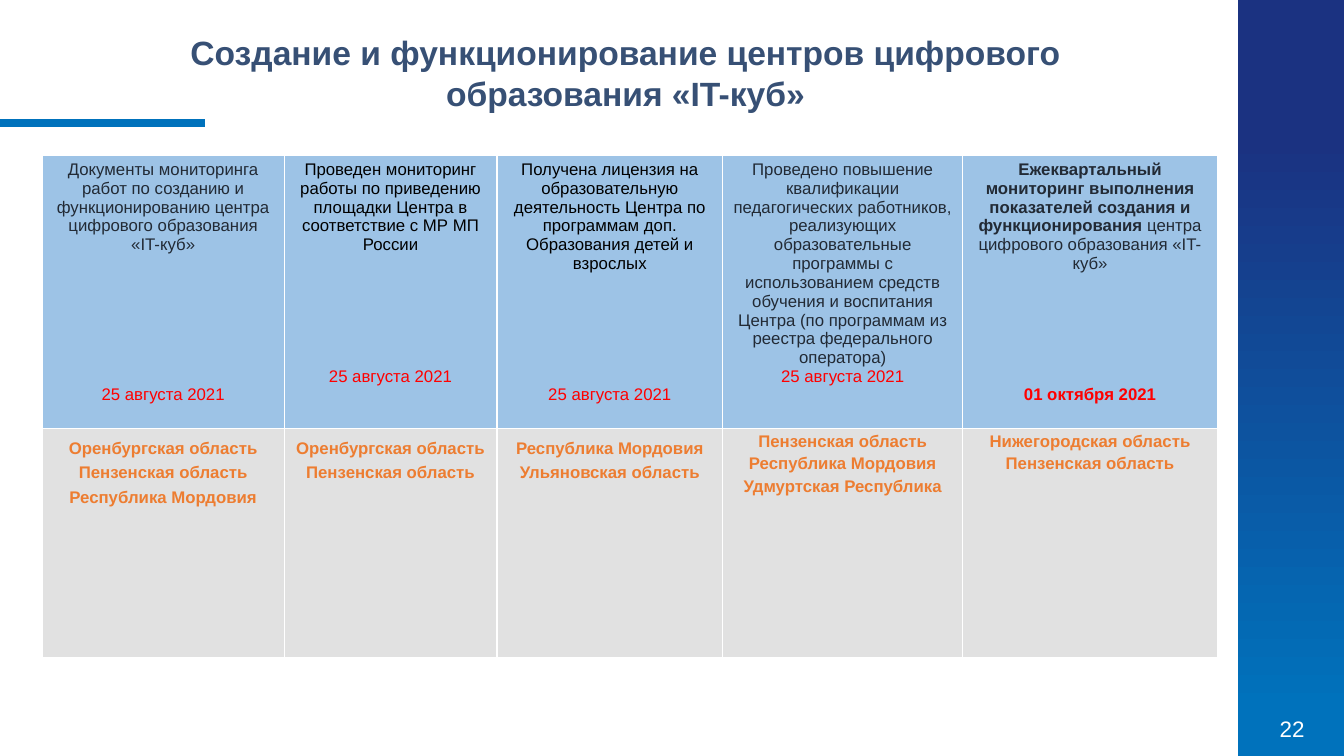
"""Build the slide on the "IT-куб" digital education centres."""
from lxml import etree
from pptx import Presentation
from pptx import util as u
from pptx.dml.color import RGBColor
from pptx.enum import shapes, text
from pptx.oxml.ns import qn

TITLE = "Создание и функционирование центров цифрового образования «IT-куб»"
PAGE_NUMBER = "22"
FONT = "Arial"
WHITE, BLACK, SLATE, RED, ORANGE = "FFFFFF", "000000", "222A35", "FF0000", "ED7D31"
BLUE, NAVY, TITLE_BLUE = "0072BC", "1B3281", "375075"
STAGE_FILL, REGION_FILL = "9DC3E6", "E1E1E1"
LINE_HEIGHT = 13.4
ROW_HEIGHTS = (195, 163.5)

STAGES = [
    dict(width=172.8, color=SLATE, gap_lines=7, date="25 августа 2021", date_bold=False,
         runs=[("Документы мониторинга работ по созданию и функционированию центра "
                "цифрового образования «IT-куб»", False)],
         regions=["Оренбургская область", "Пензенская область", "Республика Мордовия"],
         spacing=1.3),
    dict(width=152, color=BLACK, gap_lines=6, date="25 августа 2021", date_bold=False,
         runs=[("Проведен мониторинг работы по приведению площадки Центра в "
                "соответствие с МР МП России", False)],
         regions=["Оренбургская область", "Пензенская область"], spacing=1.3),
    dict(width=161.3, color=BLACK, gap_lines=6, date="25 августа 2021", date_bold=False,
         runs=[("Получена лицензия на образовательную деятельность Центра по "
                "программам доп. Образования детей и взрослых", False)],
         regions=["Республика Мордовия", "Ульяновская область"], spacing=1.3),
    dict(width=171.4, color=SLATE, gap_lines=0, date="25 августа 2021", date_bold=False,
         runs=[("Проведено повышение квалификации педагогических работников, "
                "реализующих образовательные программы с использованием средств "
                "обучения и воспитания Центра (по программам из реестра "
                "федерального оператора)", False)],
         regions=["Пензенская область", "Республика Мордовия", "Удмуртская Республика"],
         spacing=1.2),
    dict(width=182, color=SLATE, gap_lines=6, date="01 октября 2021", date_bold=True,
         runs=[("Ежеквартальный мониторинг выполнения показателей создания и "
                "функционирования ", True),
               ("центра цифрового образования «IT-куб»", False)],
         regions=["Нижегородская область", "Пензенская область"], spacing=1.2),
]


def rgb(value):
    """Turn a hex string into a colour."""
    return RGBColor.from_string(value)


def add_run(paragraph, words, size, color, bold=False):
    """Add one formatted run to a centred paragraph."""
    paragraph.alignment = text.PP_ALIGN.CENTER
    run = paragraph.add_run()
    run.text = words
    run.font.name, run.font.size, run.font.bold = FONT, u.Pt(size), bold
    run.font.color.rgb = rgb(color)


def add_label(slide, box, words, size, color, bold, anchor):
    """Add a wrapped text box."""
    frame = slide.shapes.add_textbox(*map(u.Pt, box)).text_frame
    frame.word_wrap = True
    frame.vertical_anchor = anchor
    add_run(frame.paragraphs[0], words, size, color, bold)


def style_cell(cell, fill):
    """Give a cell thin white borders and a solid fill."""
    properties = cell._tc.get_or_add_tcPr()
    for side in ("lnL", "lnR", "lnT", "lnB"):
        line = etree.SubElement(properties, qn("a:" + side), w=str(u.Pt(1)))
        solid = etree.SubElement(line, qn("a:solidFill"))
        etree.SubElement(solid, qn("a:srgbClr"), val=WHITE)
    cell.fill.solid()
    cell.fill.fore_color.rgb = rgb(fill)


def add_side_band(slide):
    """Draw the gradient band on the right edge."""
    band = slide.shapes.add_shape(shapes.MSO_SHAPE.RECTANGLE,
                                  u.Pt(884.3), u.Pt(0), u.Pt(75.7), u.Pt(540))
    band.shadow.inherit = False
    band.line.fill.background()
    band.fill.gradient()
    band.fill.gradient_angle = 270
    for stop, (position, color) in zip(band.fill.gradient_stops, [(0.18, NAVY), (0.94, BLUE)]):
        stop.position = position
        stop.color.rgb = rgb(color)


def add_accent_line(slide):
    """Draw the short line under the title."""
    line = slide.shapes.add_connector(shapes.MSO_CONNECTOR.STRAIGHT,
                                      u.Pt(0), u.Pt(87.8), u.Pt(146.2), u.Pt(87.8))
    line.line.color.rgb = rgb(BLUE)
    line.line.width = u.Pt(6)
    etree.SubElement(line._element.spPr, qn("a:effectLst"))


def add_stage_table(slide):
    """Add the table of stages, dates and regions."""
    width = sum(stage["width"] for stage in STAGES)
    table = slide.shapes.add_table(2, len(STAGES), u.Pt(30.2), u.Pt(110.9),
                                   u.Pt(width), u.Pt(sum(ROW_HEIGHTS))).table
    table.first_row = table.horz_banding = False
    for row, height in zip(table.rows, ROW_HEIGHTS):
        row.height = u.Pt(height)
    for index, stage in enumerate(STAGES):
        table.columns[index].width = u.Pt(stage["width"])
        stage_cell, region_cell = table.cell(0, index), table.cell(1, index)
        style_cell(stage_cell, STAGE_FILL)
        style_cell(region_cell, REGION_FILL)
        frame = stage_cell.text_frame
        for words, bold in stage["runs"]:
            add_run(frame.paragraphs[0], words, 12, stage["color"], bold)
        date = frame.add_paragraph()
        date.space_before = u.Pt(stage["gap_lines"] * LINE_HEIGHT)
        add_run(date, stage["date"], 12, RED, stage["date_bold"])
        if stage["spacing"] == 1.2:
            region_cell.margin_left = region_cell.margin_right = 0
            region_cell.margin_top = region_cell.margin_bottom = 0
        frame = region_cell.text_frame
        for number, region in enumerate(stage["regions"]):
            paragraph = frame.add_paragraph() if number else frame.paragraphs[0]
            paragraph.line_spacing = stage["spacing"]
            add_run(paragraph, region, 12, ORANGE, True)


def main():
    """Assemble and save the slide."""
    presentation = Presentation()
    presentation.slide_width, presentation.slide_height = u.Pt(960), u.Pt(540)
    slide = presentation.slides.add_slide(presentation.slide_layouts[6])
    add_side_band(slide)
    add_label(slide, (894.2, 505.4, 57.6, 29.5), PAGE_NUMBER, 16, WHITE, False,
              text.MSO_ANCHOR.MIDDLE)
    add_accent_line(slide)
    add_stage_table(slide)
    add_label(slide, (104.4, 19.4, 684.7, 65.5), TITLE, 24, TITLE_BLUE, True,
              text.MSO_ANCHOR.TOP)
    presentation.save("out.pptx")


if __name__ == "__main__":
    main()
